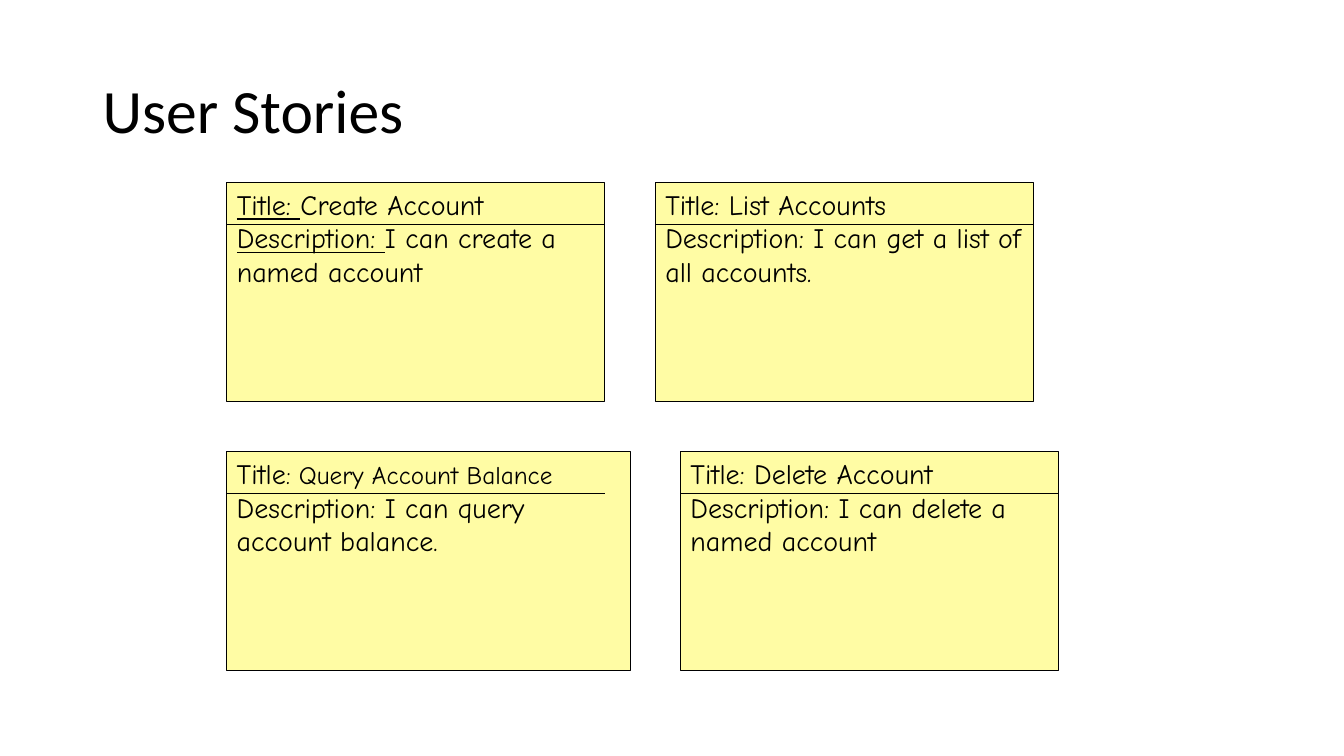
"""Build the User Stories slide with four story cards."""
import pptx
import pptx.dml.color
import pptx.enum.shapes
import pptx.enum.text
import pptx.oxml.ns
import pptx.util
from lxml import etree

COLUMN = 0.25
TOP_ROW, ROW_PITCH = 1.81, 2.67
CARD_WIDTH, CARD_HEIGHT, RULE_DROP = 3.75, 2.17, 0.42
INK, PAPER = "000000", "FFFCA4"
TITLE_FONT = {"name": "Calibri", "size": pptx.util.Pt(44)}
CARD_FONT = {"name": "Comic Neue", "size": pptx.util.Pt(20)}
UNDERLINED = {"underline": True}
SMALLER = {"size": pptx.util.Pt(18)}

CARDS = [
    (9, 0, CARD_WIDTH,
     [[("Title: ", UNDERLINED), ("Create Account", {})],
      [("Description: ", UNDERLINED), ("I can create a named account", {})]]),
    (26, 0, CARD_WIDTH,
     [[("Title: List Accounts", {})],
      [("Description: I can get a list of all accounts.", {})]]),
    (27, 1, CARD_WIDTH,
     [[("Title: Delete Account", {})],
      [("Description: I can delete a named account", {})]]),
    (9, 1, 4,
     [[("Title", {}), (": Query Account Balance", SMALLER)],
      [("Description: I can query account balance.", {})]]),
]


def color(code):
    """Turn a hex string into a colour."""
    return pptx.dml.color.RGBColor.from_string(code)


def inches(*values):
    """Turn numbers into lengths in inches."""
    return [pptx.util.Inches(value) for value in values]


def add_span(para, text, formats):
    """Add a run of text with the given font formats."""
    span = para.add_run()
    span.text = text
    span.font.color.rgb = color(INK)
    for name, value in formats.items():
        setattr(span.font, name, value)


def set_outline(shape):
    """Give a shape or connector the thin dark line."""
    shape.line.color.rgb = color(INK)
    shape.line.width = pptx.util.Pt(0.75)


def add_title(page, text):
    """Add the slide heading."""
    box = page.shapes.add_textbox(*inches(0.92, 0.4, 11.5, 1.45))
    frame = box.text_frame
    frame.word_wrap = True
    frame.vertical_anchor = pptx.enum.text.MSO_ANCHOR.MIDDLE
    para = frame.paragraphs[0]
    para.line_spacing = 0.9
    add_span(para, text, TITLE_FONT)


def add_rule(group, left, top):
    """Add the line under a card's title."""
    rule = group.shapes.add_connector(
        pptx.enum.shapes.MSO_CONNECTOR.STRAIGHT,
        *inches(left, top, left + CARD_WIDTH, top))
    set_outline(rule)
    etree.SubElement(rule._element.spPr, pptx.oxml.ns.qn("a:effectLst"))


def add_card(page, column, row, width, paragraphs):
    """Add a story card with its text and title rule."""
    left, top = column * COLUMN, TOP_ROW + row * ROW_PITCH
    group = page.shapes.add_group_shape()
    card = group.shapes.add_shape(
        pptx.enum.shapes.MSO_SHAPE.RECTANGLE,
        *inches(left, top, width, CARD_HEIGHT))
    card.shadow.inherit = False
    card.fill.solid()
    card.fill.fore_color.rgb = color(PAPER)
    set_outline(card)
    frame = card.text_frame
    frame.word_wrap = True
    frame.vertical_anchor = pptx.enum.text.MSO_ANCHOR.TOP
    for index, spans in enumerate(paragraphs):
        para = frame.add_paragraph() if index else frame.paragraphs[0]
        para.alignment = pptx.enum.text.PP_ALIGN.LEFT
        for text, formats in spans:
            add_span(para, text, {**CARD_FONT, **formats})
    add_rule(group, left, top + RULE_DROP)


def main():
    """Build and save the deck."""
    deck = pptx.Presentation()
    deck.slide_width, deck.slide_height = inches(13.33, 7.5)
    page = deck.slides.add_slide(deck.slide_layouts[6])
    add_title(page, "User Stories")
    for card in CARDS:
        add_card(page, *card)
    deck.save("out.pptx")


if __name__ == "__main__":
    main()
